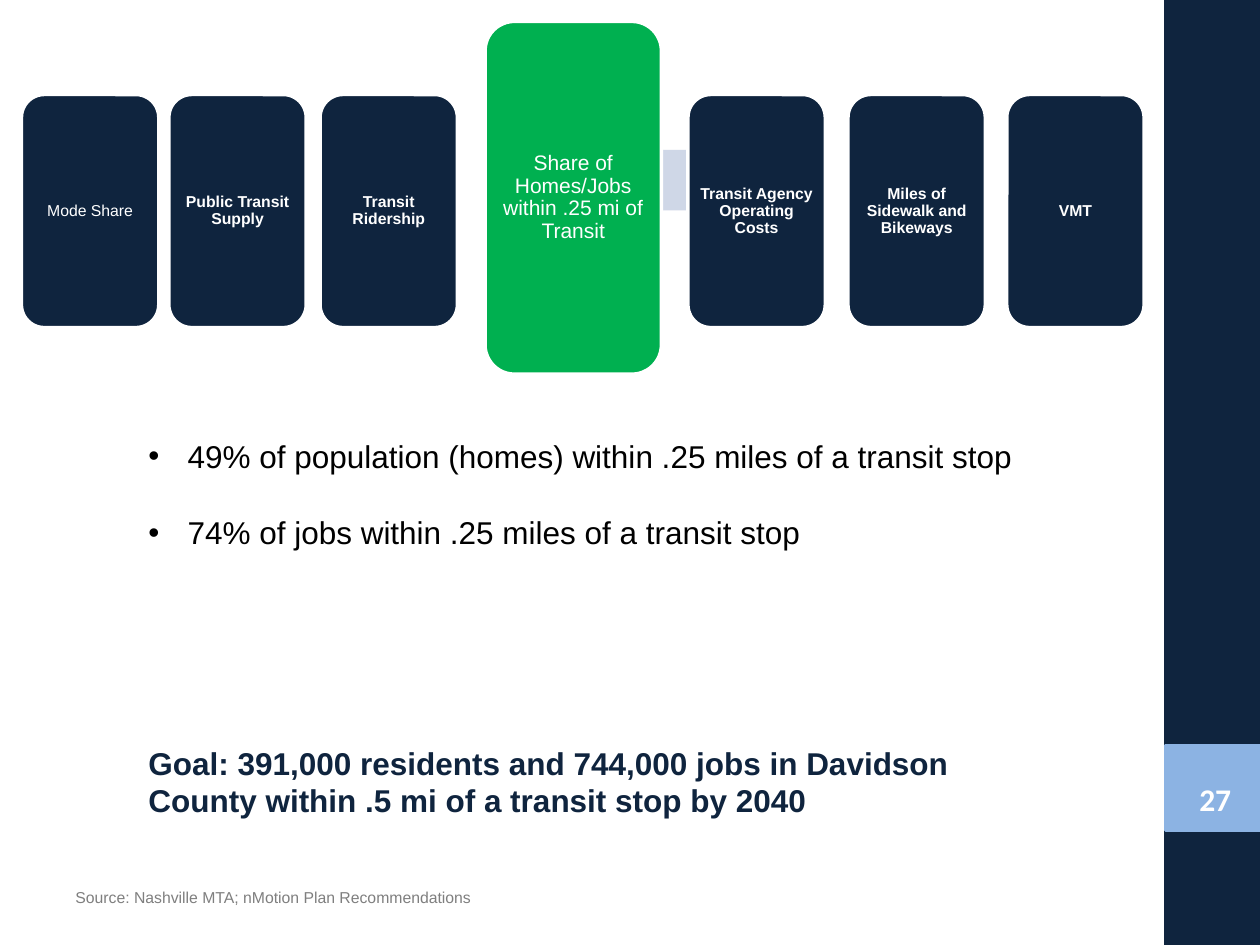
import pptx
import pptx.util
from pptx.dml.color import RGBColor
from pptx.enum.shapes import MSO_SHAPE
from pptx.enum.text import MSO_ANCHOR, PP_ALIGN
from pptx.oxml.ns import qn
from lxml import etree

Inches = pptx.util.Inches
Pt = pptx.util.Pt

COLORS = {
    "navy": "0F243E",
    "light_blue": "8CB3E3",
    "green": "00B050",
    "arrow": "CFD7E7",
    "white": "FFFFFF",
    "black": "000000",
    "gray": "7F7F7F",
}

MEASURES = [
    ("Mode Share", 0.17, False),
    ("Public Transit Supply", 1.34, True),
    ("Transit Ridership", 2.54, True),
    ("Transit Agency Operating Costs", 5.46, True),
    ("Miles of Sidewalk and Bikeways", 6.73, True),
    ("VMT", 7.99, True),
]


def color(name):
    return RGBColor.from_string(COLORS[name])


def add_text(tf, text, size=18, name="Arial", fill="black", bold=False,
             align=PP_ALIGN.LEFT, spacing=None, before=0, bullet=False, first=True):
    p = tf.paragraphs[0] if first else tf.add_paragraph()
    p.alignment = align
    if spacing:
        p.line_spacing = spacing
    if before:
        p.space_before = Pt(before)
    if bullet:
        pPr = p._p.get_or_add_pPr()
        pPr.set("marL", str(Inches(0.31)))
        pPr.set("indent", str(Inches(-0.31)))
        clr = etree.SubElement(pPr, qn("a:buClr"))
        etree.SubElement(clr, qn("a:srgbClr"), val=COLORS["black"])
        etree.SubElement(pPr, qn("a:buFont"), typeface="Arial")
        etree.SubElement(pPr, qn("a:buChar"), char="•")
    r = p.add_run()
    r.text = text
    r.font.size = Pt(size)
    r.font.name = name
    r.font.bold = bold
    r.font.color.rgb = color(fill)


def add_box(s, kind, left, top, width, height, fill, line=None):
    sp = s.shapes.add_shape(kind, Inches(left), Inches(top), Inches(width), Inches(height))
    sp.shadow.inherit = False
    sp.fill.solid()
    sp.fill.fore_color.rgb = color(fill)
    if line:
        sp.line.color.rgb = color(line)
        sp.line.width = Pt(2)
    else:
        sp.line.fill.background()
    return sp


def add_textbox(s, left, top, width, height):
    sp = s.shapes.add_textbox(Inches(left), Inches(top), Inches(width), Inches(height))
    sp.text_frame.word_wrap = True
    return sp.text_frame


def add_card(s, text, left, top, width, height, fill="navy", size=9, bold=True, inset=0.04):
    sp = add_box(s, MSO_SHAPE.ROUNDED_RECTANGLE, left, top, width, height, fill, "white")
    tf = sp.text_frame
    tf.word_wrap = True
    tf.vertical_anchor = MSO_ANCHOR.MIDDLE
    tf.margin_left = tf.margin_right = tf.margin_top = tf.margin_bottom = Inches(inset)
    add_text(tf, text, size=size, fill="white", bold=bold, align=PP_ALIGN.CENTER, spacing=0.9)


def add_sidebar(s, left, top, width, height):
    add_box(s, MSO_SHAPE.RECTANGLE, left, top, width, height, "navy", "navy")
    add_box(s, MSO_SHAPE.RECTANGLE, left, top + 5.91, width, 0.67, "light_blue", "light_blue")
    tf = add_textbox(s, left + 0.17, top + 6.13, 0.46, 0.4)
    add_text(tf, "27", name="Calibri", fill="white", bold=True)


def add_measures(s, top, height):
    add_box(s, MSO_SHAPE.RIGHT_ARROW, 5.2, top + 0.78, 0.71, 0.96, "arrow")
    for text, left, bold in MEASURES:
        add_card(s, text, left, top + 0.58, 1.09, 1.85, bold=bold)
    add_card(s, "Share of Homes/Jobs within .25 mi of Transit", 3.85, top, 1.4, height,
             fill="green", size=12, bold=False, inset=0.05)


def add_findings(s, left, top, width, height):
    tf = add_textbox(s, left, top, width, height)
    add_text(tf, "49% of population (homes) within .25 miles of a transit stop", bullet=True)
    add_text(tf, "74% of jobs within .25 miles of a transit stop",
             bullet=True, before=22, first=False)
    add_text(tf, "Goal: 391,000 residents and 744,000 jobs in Davidson County "
             "within .5 mi of a transit stop by 2040",
             fill="navy", bold=True, before=110, first=False)


def add_source(s, left, top, width, height):
    tf = add_textbox(s, left, top, width, height)
    add_text(tf, "Source: Nashville MTA; nMotion Plan Recommendations", size=9, fill="gray")


def main():
    prs = pptx.Presentation()
    prs.slide_width = Inches(10)
    prs.slide_height = Inches(7.5)
    s = prs.slides.add_slide(prs.slide_layouts[6])
    add_sidebar(s, 9.25, 0.01, 0.75, 7.5)
    add_findings(s, 1.08, 3.42, 7.25, 3.13)
    add_measures(s, 0.17, 2.8)
    add_source(s, 0.5, 7, 3.38, 0.25)
    prs.save("out.pptx")


if __name__ == "__main__":
    main()
